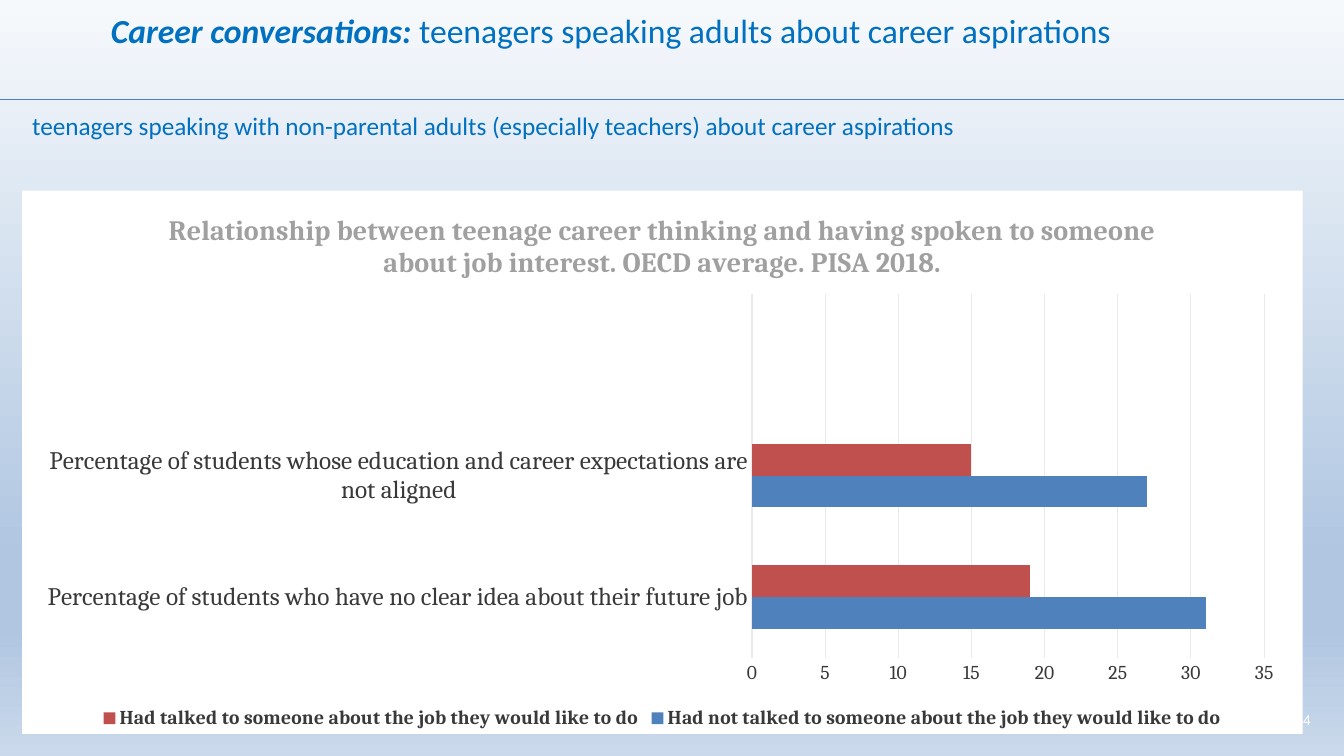
"""Build the career conversations slide with its clustered bar chart."""
import copy

import pptx
import pptx.chart.data
import pptx.dml.color
import pptx.enum.chart
import pptx.enum.shapes
import pptx.enum.text
import pptx.oxml
import pptx.oxml.ns
import pptx.util

Inches, Pt = pptx.util.Inches, pptx.util.Pt
COLORS = {"blue": "0070C0", "rule": "4F81BD", "red": "C0504D", "white": "FFFFFF",
          "dark": "393939", "title": "A0A0A0", "grid": "EAEAEA"}
BACKGROUND = [(0, "F6F9FC"), (74, "B0C6E1"), (83, "B0C6E1"), (100, "CAD9EB")]
WIDTH, HEIGHT = 13.33, 7.5
RULE_Y = 0.99
BOXES = {"title": (1, 0.13, 12.34, 0.74), "number": (12.6, 7.01, 0.5, 0.27),
         "chart": (0.22, 1.89, 12.7, 5.39), "subtitle": (0.22, 1.04, 12.12, 1.01)}
TITLE = [("Career conversations: ", True),
         ("teenagers speaking adults about career aspirations", False)]
SUBTITLE = ("teenagers speaking with non-parental adults (especially teachers) "
            "about career aspirations")
NUMBER = "14"
CHART_TITLE = ("Relationship between teenage career thinking and having spoken to someone "
               "about job interest. OECD average. PISA 2018.")
CATEGORIES = ["Percentage of students who have no clear idea about their future job",
              "Percentage of students whose education and career expectations are not aligned"]
SERIES = [("Had not talked to someone about the job they would like to do",
           (31, 27, None), "rule"),
          ("Had talked to someone about the job they would like to do",
           (19, 15, None), "red")]
PLOT = {"x": 0.57, "y": 0.19, "w": 0.4, "h": 0.67}
FORMATS = {
    "heading": {"name": "Calibri", "size": Pt(24)},
    "subtitle": {"name": "Calibri", "size": Pt(18)},
    "number": {"name": "Arial", "size": Pt(10)},
    "chart title": {"name": "Cambria", "size": Pt(20), "bold": True},
    "categories": {"name": "Cambria", "size": Pt(18), "bold": False},
    "values": {"name": "Cambria", "size": Pt(14), "bold": False},
    "legend": {"name": "Cambria", "size": Pt(14), "bold": True},
}


def rgb(key):
    return pptx.dml.color.RGBColor.from_string(COLORS[key])


def style(font, kind, color):
    for name, value in FORMATS[kind].items():
        setattr(font, name, value)
    font.color.rgb = rgb(color)


def place(key):
    return [Inches(v) for v in BOXES[key]]


def chart_xml(tag, inner):
    ns = pptx.oxml.ns.nsdecls("c", "a")
    return pptx.oxml.parse_xml(f"<{tag} {ns}>{inner}</{tag}>")


def add_background(s):
    fill = s.background.fill
    fill.gradient()
    fill.gradient_angle = 270
    stops = s._element.xpath(".//a:gsLst")[0]
    for _ in BACKGROUND[2:]:
        stops.append(copy.deepcopy(stops[0]))
    for stop, (position, color) in zip(fill.gradient_stops, BACKGROUND):
        stop.position = position / 100
        stop.color.rgb = pptx.dml.color.RGBColor.from_string(color)


def add_rule(s):
    y = Inches(RULE_Y)
    sp = s.shapes.add_connector(pptx.enum.shapes.MSO_CONNECTOR.STRAIGHT,
                                0, y, Inches(WIDTH), y)
    sp.line.color.rgb = rgb("rule")
    sp.line.width = Pt(0.75)
    sp._element.spPr.append(chart_xml("a:effectLst", ""))


def add_title(s):
    sp = s.shapes.title
    sp.left, sp.top, sp.width, sp.height = place("title")
    tf = sp.text_frame
    tf.vertical_anchor = pptx.enum.text.MSO_ANCHOR.MIDDLE
    tf.auto_size = pptx.enum.text.MSO_AUTO_SIZE.NONE
    p = tf.paragraphs[0]
    p.alignment = pptx.enum.text.PP_ALIGN.LEFT
    for text, strong in TITLE:
        r = p.add_run()
        r.text = text
        style(r.font, "heading", "blue")
        r.font.bold = r.font.italic = strong
    p.add_line_break()
    style(p.font, "heading", "blue")


def add_text(s, key, text, color, align, wrap):
    tf = s.shapes.add_textbox(*place(key)).text_frame
    tf.word_wrap = wrap
    p = tf.paragraphs[0]
    p.alignment = align
    r = p.add_run()
    r.text = text
    style(r.font, key, color)


def add_bars(s):
    enums = pptx.enum.chart
    data = pptx.chart.data.CategoryChartData()
    data.categories = CATEGORIES
    for name, values, _ in SERIES:
        data.add_series(name, values)
    chart = s.shapes.add_chart(enums.XL_CHART_TYPE.BAR_CLUSTERED, *place("chart"), data).chart
    chart.has_title = True
    p = chart.chart_title.text_frame.paragraphs[0]
    r = p.add_run()
    r.text = CHART_TITLE
    style(r.font, "chart title", "title")
    chart.has_legend = True
    chart.legend.position = enums.XL_LEGEND_POSITION.BOTTOM
    chart.legend.include_in_layout = False
    style(chart.legend.font, "legend", "dark")
    plot = chart.plots[0]
    plot.gap_width, plot.overlap, plot.vary_by_categories = 182, 0, False
    for series, (_, _, color) in zip(plot.series, SERIES):
        series.format.fill.solid()
        series.format.fill.fore_color.rgb = rgb(color)
    for axis, kind in ((chart.category_axis, "categories"), (chart.value_axis, "values")):
        axis.major_tick_mark = axis.minor_tick_mark = enums.XL_TICK_MARK.NONE
        style(axis.tick_labels.font, kind, "dark")
    axis = chart.value_axis
    axis.minimum_scale, axis.maximum_scale, axis.major_unit = 0, 35, 5
    axis.has_major_gridlines = True
    axis.format.line.fill.background()
    for line in (chart.category_axis.format.line, axis.major_gridlines.format.line):
        line.color.rgb = rgb("grid")
        line.width = Pt(0.75)
    area = chart._chartSpace.xpath("c:chart/c:plotArea")[0]
    for layout in area.xpath("c:layout"):
        area.remove(layout)
    inner = '<c:layoutTarget val="inner"/><c:xMode val="edge"/><c:yMode val="edge"/>'
    inner += "".join(f'<c:{k} val="{v}"/>' for k, v in PLOT.items())
    area.insert(0, chart_xml("c:layout", f"<c:manualLayout>{inner}</c:manualLayout>"))
    fill = f'<a:solidFill><a:srgbClr val="{COLORS["white"]}"/></a:solidFill>'
    chart._chartSpace.xpath("c:chart")[0].addnext(
        chart_xml("c:spPr", fill + "<a:ln><a:noFill/></a:ln>"))


def main():
    prs = pptx.Presentation()
    prs.slide_width, prs.slide_height = Inches(WIDTH), Inches(HEIGHT)
    s = prs.slides.add_slide(prs.slide_layouts[5])
    align = pptx.enum.text.PP_ALIGN
    add_background(s)
    add_rule(s)
    add_title(s)
    add_text(s, "number", NUMBER, "white", align.RIGHT, False)
    add_bars(s)
    add_text(s, "subtitle", SUBTITLE, "blue", align.LEFT, True)
    prs.save("out.pptx")


if __name__ == "__main__":
    main()
